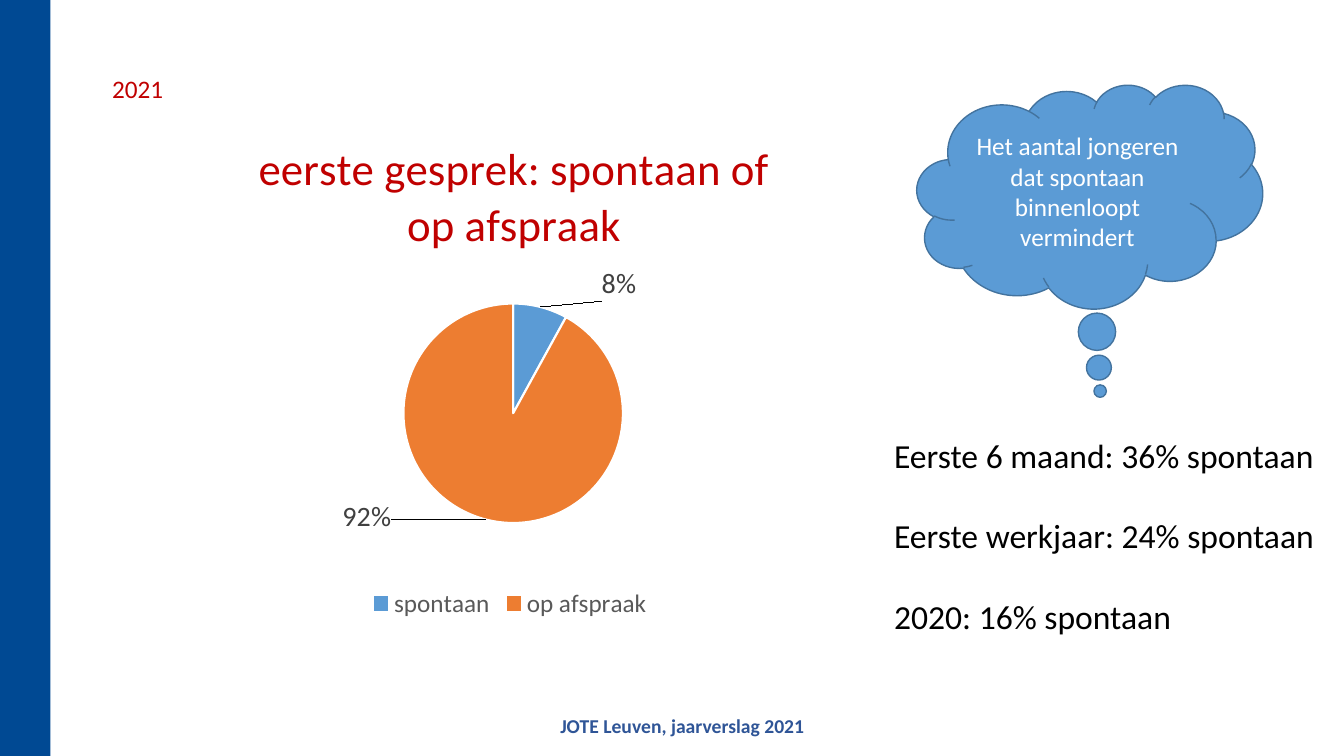
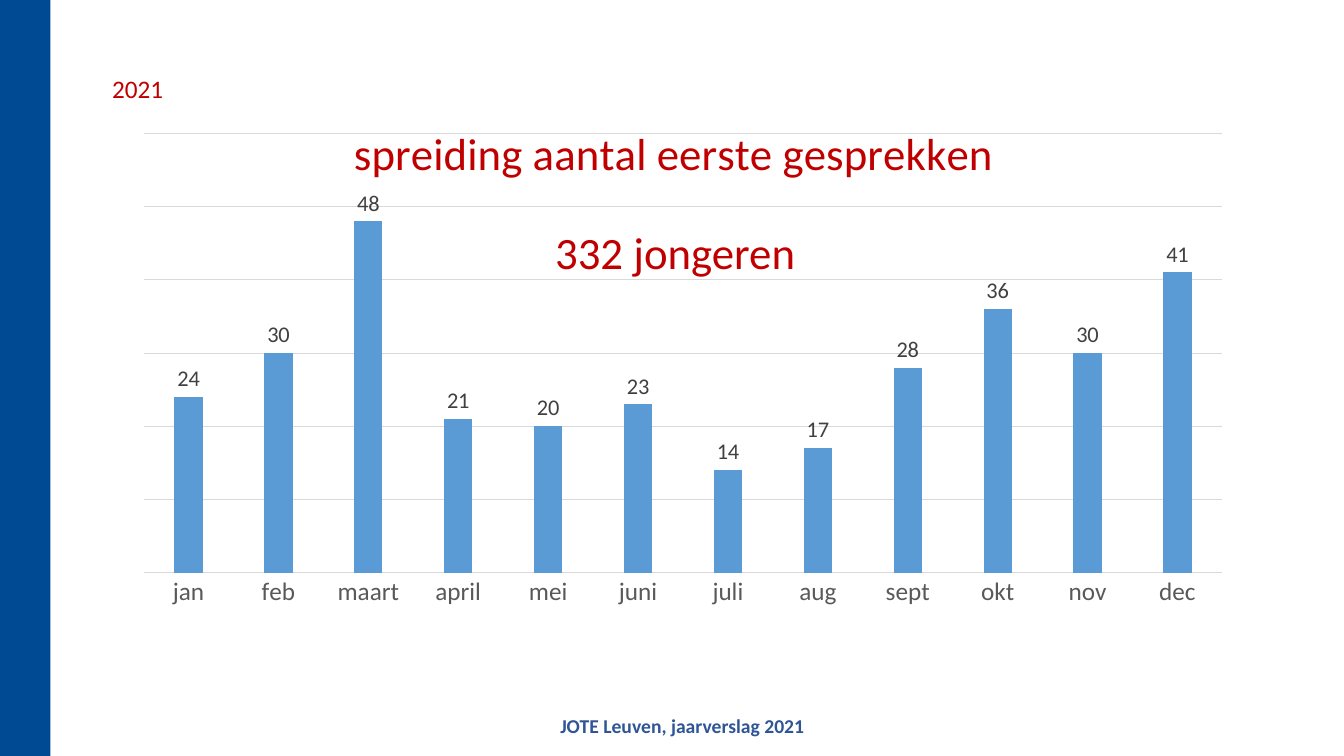
from dataclasses import dataclass

import lxml.etree
import pptx
import pptx.chart.chart
import pptx.chart.data
import pptx.dml.color
import pptx.enum.chart
import pptx.enum.shapes
import pptx.enum.text
import pptx.oxml
import pptx.oxml.ns
import pptx.presentation
import pptx.shapes.base
import pptx.slide
import pptx.util
from pptx.dml.color import RGBColor
from pptx.util import Cm, Pt

BAND_BLUE = RGBColor(0x00, 0x49, 0x93)
FOOTER_BLUE = RGBColor(0x2F, 0x55, 0x97)
CHART_BLUE = RGBColor(0x5B, 0x9B, 0xD5)
CLOUD_LINE = RGBColor(0x43, 0x73, 0x9E)
ORANGE = RGBColor(0xED, 0x7D, 0x31)
TITLE_RED = RGBColor(0xC0, 0x00, 0x00)
LABEL_GREY = RGBColor(0x40, 0x40, 0x40)
AXIS_GREY = RGBColor(0x59, 0x59, 0x59)
GRID_GREY = RGBColor(0xD9, 0xD9, 0xD9)
BLACK = RGBColor(0x00, 0x00, 0x00)
WHITE = RGBColor(0xFF, 0xFF, 0xFF)

FONT = "Calibri"
SLIDE_WIDTH, SLIDE_HEIGHT = Cm(33.87), Cm(19.05)
TITLE_AND_BODY, TITLE_ONLY = 1, 5
MONTHS = ("jan", "feb", "maart", "april", "mei", "juni",
          "juli", "aug", "sept", "okt", "nov", "dec")
FIRST_TALKS = (24, 30, 48, 21, 20, 23, 14, 17, 28, 36, 30, 41)


@dataclass(frozen=True)
class Box:
    """Place and size in centimetres."""
    left: float
    top: float
    width: float
    height: float

    def lengths(self) -> tuple[int, int, int, int]:
        return Cm(self.left), Cm(self.top), Cm(self.width), Cm(self.height)


@dataclass(frozen=True)
class ChartSpec:
    kind: pptx.enum.chart.XL_CHART_TYPE
    box: Box
    title: str
    title_place: dict[str, float]
    plot_place: dict[str, float]
    categories: tuple[str, ...]
    values: tuple[float, ...]
    number_format: str
    label_size: int


@dataclass(frozen=True)
class SlicePart:
    color: RGBColor
    label_shift: dict[str, float]


SPONTANEOUS_CHART = ChartSpec(
    pptx.enum.chart.XL_CHART_TYPE.PIE, Box(4.47, 2.46, 16.76, 13.26),
    "eerste gesprek: spontaan of op afspraak", {"x": 0.11, "y": 0.06},
    {"x": 0.34, "y": 0.39, "w": 0.33, "h": 0.42},
    ("spontaan", "op afspraak"), (0.08, 0.92), "0%", 20)
SLICES = (SlicePart(CHART_BLUE, {"x": 0.09, "y": 0}),
          SlicePart(ORANGE, {"x": -0.14, "y": -0.05}))
SPREAD_CHART = ChartSpec(
    pptx.enum.chart.XL_CHART_TYPE.COLUMN_CLUSTERED, Box(2.77, 2.06, 28.32, 16.28),
    "spreiding aantal eerste gesprekken", {"x": 0.21, "y": 0.05},
    {"x": 0.03, "y": 0.08, "w": 0.96, "h": 0.68},
    MONTHS, FIRST_TALKS, "General", 16)


def format_font(font, size: float, color: RGBColor, bold: bool = False) -> None:
    font.name, font.size, font.bold = FONT, Pt(size), bold
    font.color.rgb = color


def write_text(shape: pptx.shapes.base.BaseShape, *lines: str, size: float,
               color: RGBColor, bold: bool = False, gap: float = 0, wrap: bool = True,
               align=pptx.enum.text.PP_ALIGN.LEFT,
               anchor=pptx.enum.text.MSO_ANCHOR.TOP) -> None:
    """Write one unbulleted paragraph per line, with gap points between them."""
    frame = shape.text_frame
    frame.text = "\n".join(lines)
    frame.word_wrap = wrap
    frame.auto_size = pptx.enum.text.MSO_AUTO_SIZE.NONE
    frame.vertical_anchor = anchor
    for number, paragraph in enumerate(frame.paragraphs):
        properties = paragraph._p.get_or_add_pPr()
        properties.set("marL", "0")
        properties.set("indent", "0")
        lxml.etree.SubElement(properties, pptx.oxml.ns.qn("a:buNone"))
        paragraph.alignment = align
        paragraph.line_spacing = 1.0
        paragraph.space_before = Pt(gap if number else 0)
        for run in paragraph.runs:
            format_font(run.font, size, color, bold)


def add_text(slide: pptx.slide.Slide, box: Box, *lines: str, **text_format):
    shape = slide.shapes.add_textbox(*box.lengths())
    write_text(shape, *lines, **text_format)
    return shape


def fill_placeholder(shape, box: Box, *lines: str, **text_format) -> None:
    shape.left, shape.top, shape.width, shape.height = box.lengths()
    write_text(shape, *lines, **text_format)


def add_preset(slide: pptx.slide.Slide, preset: pptx.enum.shapes.MSO_SHAPE,
               box: Box, fill: RGBColor, line: RGBColor | None = None):
    shape = slide.shapes.add_shape(preset, *box.lengths())
    shape.shadow.inherit = False
    shape.fill.solid()
    shape.fill.fore_color.rgb = fill
    if line is None:
        shape.line.fill.background()
    else:
        shape.line.color.rgb = line
        shape.line.width = Pt(1)
    return shape


def add_page(presentation: pptx.presentation.Presentation, layout: int) -> pptx.slide.Slide:
    slide = presentation.slides.add_slide(presentation.slide_layouts[layout])
    fill_placeholder(slide.shapes.title, Box(2.57, 1.73, 1.98, 1.02), "2021",
                     size=18, color=TITLE_RED, wrap=False)
    return slide


def furnish_master(presentation: pptx.presentation.Presentation,
                   slide: pptx.slide.Slide) -> None:
    """Draw band and footer on the slide, then move them to the master."""
    band = add_preset(slide, pptx.enum.shapes.MSO_SHAPE.RECTANGLE,
                      Box(0, 0, 1.27, 19.05), BAND_BLUE)
    footer = add_text(slide, Box(13.87, 17.86, 6.78, 0.86),
                      "JOTE Leuven, jaarverslag 2021",
                      size=14, color=FOOTER_BLUE, bold=True, wrap=False)
    for shape in (band, footer):
        presentation.slide_master.shapes.element.append(shape.element)


def set_layout(parent, index: int, place: dict[str, float], modes: dict[str, str]) -> None:
    """Give a chart part a manual layout, as its child number index."""
    for old_layout in parent.xpath("c:layout"):
        parent.remove(old_layout)
    layout = pptx.oxml.parse_xml(f"<c:layout {pptx.oxml.ns.nsdecls('c')}/>")
    manual = lxml.etree.SubElement(layout, pptx.oxml.ns.qn("c:manualLayout"))
    for name, value in {**modes, **place}.items():
        lxml.etree.SubElement(manual, pptx.oxml.ns.qn(f"c:{name}"), val=str(value))
    parent.insert(index, layout)


def add_chart(slide: pptx.slide.Slide, spec: ChartSpec) -> pptx.chart.chart.Chart:
    data = pptx.chart.data.CategoryChartData(number_format=spec.number_format)
    data.categories = spec.categories
    data.add_series("Series 1", spec.values)
    chart = slide.shapes.add_chart(spec.kind, *spec.box.lengths(), data).chart
    format_font(chart.font, 10, BLACK)
    chart.has_legend = False
    chart.has_title = True
    chart.chart_title.text_frame.text = spec.title
    format_font(chart.chart_title.text_frame.paragraphs[0].runs[0].font, 32, TITLE_RED)
    chart.chart_title.include_in_layout = False

    edges = {"xMode": "edge", "yMode": "edge"}
    set_layout(chart.element.xpath("c:chart/c:title")[0], 1, spec.title_place, edges)
    set_layout(chart.element.xpath("c:chart/c:plotArea")[0], 0, spec.plot_place,
               {"layoutTarget": "inner", **edges})
    chart.element.xpath("c:chart")[0].addnext(pptx.oxml.parse_xml(
        f"<c:spPr {pptx.oxml.ns.nsdecls('c', 'a')}><a:noFill/>"
        "<a:ln><a:noFill/></a:ln></c:spPr>"))

    plot = chart.plots[0]
    plot.vary_by_categories = spec.kind == pptx.enum.chart.XL_CHART_TYPE.PIE
    labels = plot.series[0].data_labels
    labels.show_value = True
    labels.number_format, labels.number_format_is_linked = spec.number_format, False
    labels.position = pptx.enum.chart.XL_LABEL_POSITION.OUTSIDE_END
    format_font(labels.font, spec.label_size, LABEL_GREY)
    return chart


def style_pie(chart: pptx.chart.chart.Chart) -> None:
    series = chart.plots[0].series[0]
    for number, part in enumerate(SLICES):
        point = series.points[number]
        point.format.fill.solid()
        point.format.fill.fore_color.rgb = part.color
        point.format.line.color.rgb = WHITE
        point.format.line.width = Pt(1.5)
        format_font(point.data_label.font, SPONTANEOUS_CHART.label_size, LABEL_GREY)
        point.data_label.position = pptx.enum.chart.XL_LABEL_POSITION.OUTSIDE_END
        label = chart.element.xpath(f".//c:dLbl[c:idx/@val='{number}']")[0]
        set_layout(label, 1, part.label_shift, {})
    for leader in chart.element.xpath(".//c:ser/c:dLbls/c:showLeaderLines"):
        leader.set("val", "1")
    chart.has_legend = True
    chart.legend.position = pptx.enum.chart.XL_LEGEND_POSITION.BOTTOM
    chart.legend.include_in_layout = False
    format_font(chart.legend.font, 18, AXIS_GREY)


def style_columns(chart: pptx.chart.chart.Chart) -> None:
    plot = chart.plots[0]
    plot.gap_width, plot.overlap = 219, -27
    fill = plot.series[0].format.fill
    fill.solid()
    fill.fore_color.rgb = CHART_BLUE
    months, counts = chart.category_axis, chart.value_axis
    months.major_tick_mark = pptx.enum.chart.XL_TICK_MARK.NONE
    format_font(months.tick_labels.font, 18, AXIS_GREY)
    counts.visible = False
    counts.minimum_scale, counts.maximum_scale, counts.major_unit = 0, 60, 10
    for line in (months.format.line, counts.major_gridlines.format.line):
        line.color.rgb = GRID_GREY
        line.width = Pt(0.75)


def build_spontaneous_slide(slide: pptx.slide.Slide) -> None:
    fill_placeholder(slide.placeholders[1], Box(22.28, 10.82, 11.43, 5.38),
                     "Eerste 6 maand: 36% spontaan",
                     "Eerste werkjaar: 24% spontaan",
                     "2020: 16% spontaan", size=24, color=BLACK, gap=29)
    cloud = add_preset(slide, pptx.enum.shapes.MSO_SHAPE.CLOUD_CALLOUT,
                       Box(23.11, 2.13, 8.71, 5.64), CHART_BLUE, CLOUD_LINE)
    cloud.adjustments[0], cloud.adjustments[1] = 0.03, 0.87
    write_text(cloud, "Het aantal jongeren dat spontaan binnenloopt vermindert",
               size=18, color=WHITE, align=pptx.enum.text.PP_ALIGN.CENTER,
               anchor=pptx.enum.text.MSO_ANCHOR.MIDDLE)
    style_pie(add_chart(slide, SPONTANEOUS_CHART))


def build_spread_slide(slide: pptx.slide.Slide) -> None:
    style_columns(add_chart(slide, SPREAD_CHART))
    add_text(slide, Box(13.74, 5.54, 10.36, 1.63), "332 jongeren",
             size=32, color=TITLE_RED)


def main() -> None:
    presentation = pptx.Presentation()
    presentation.slide_width, presentation.slide_height = SLIDE_WIDTH, SLIDE_HEIGHT
    spontaneous_slide = add_page(presentation, TITLE_AND_BODY)
    furnish_master(presentation, spontaneous_slide)
    build_spontaneous_slide(spontaneous_slide)
    build_spread_slide(add_page(presentation, TITLE_ONLY))
    presentation.save("out.pptx")


if __name__ == "__main__":
    main()
